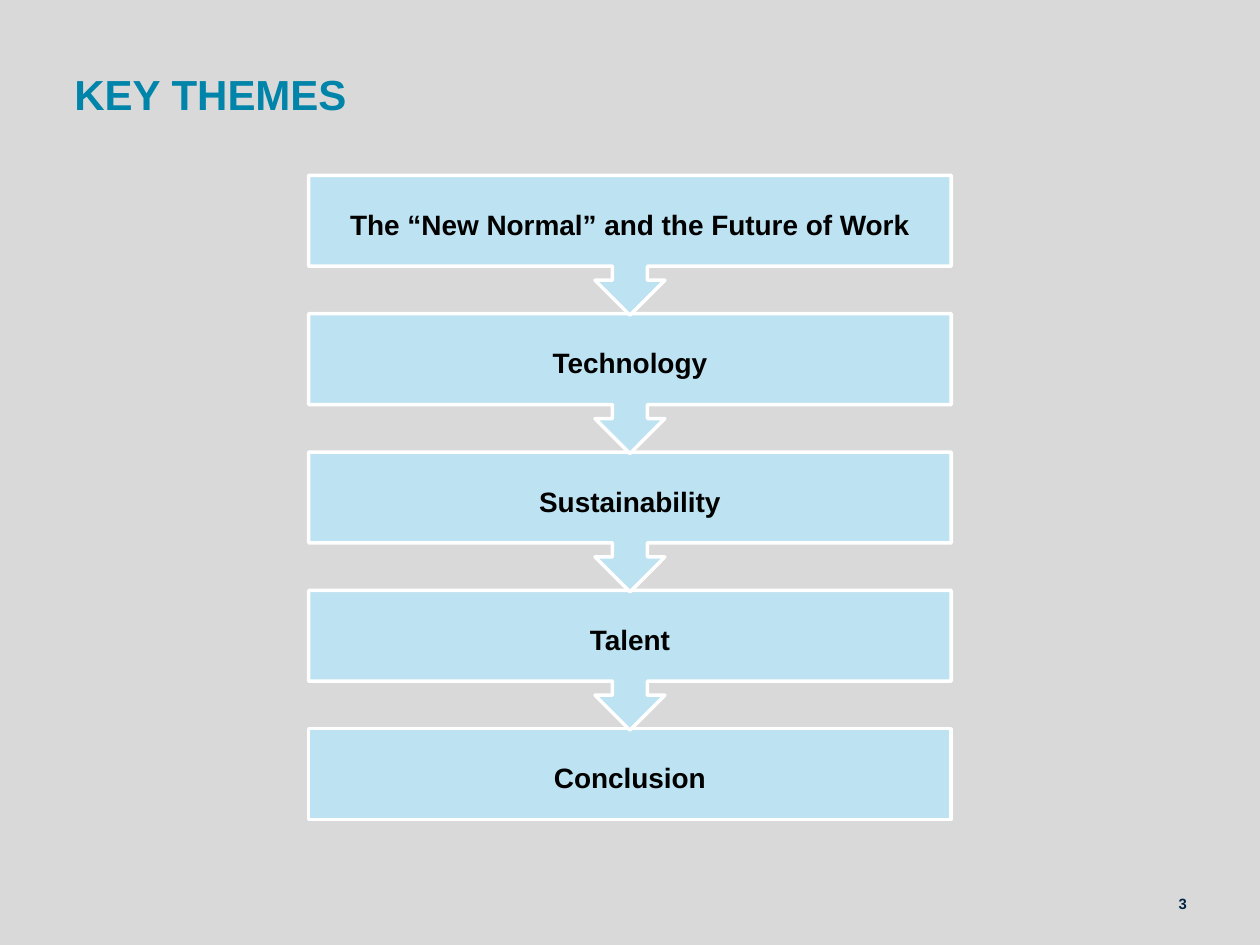
from pptx import Presentation
from pptx.dml.color import RGBColor
from pptx.enum import shapes, text
from pptx.util import Pt

TITLE = "KEY THEMES"
THEMES = [
    "The “New Normal” and the Future of Work",
    "Technology",
    "Sustainability",
    "Talent",
    "Conclusion",
]
PAGE_NUMBER = "3"
COLORS = {
    "background": "D9D9D9",
    "title": "0084A9",
    "step": "BDE2F1",
    "outline": "FFFFFF",
    "theme": "000000",
    "page": "002244",
}
SLIDE_WIDTH, SLIDE_HEIGHT = 720, 540
STEP_WIDTH, STEP_TOP, STEP_PITCH = 367.2, 100.2, 79.05
CALLOUT_HEIGHT, BOX_HEIGHT = 79.9, 51.9
STEP_LEFT = (SLIDE_WIDTH - STEP_WIDTH) / 2


def color(name):
    return RGBColor.from_string(COLORS[name])


def write(shape, words, size, color_name, align, insets):
    frame = shape.text_frame
    frame.word_wrap = True
    frame.auto_size = text.MSO_AUTO_SIZE.NONE
    frame.vertical_anchor = text.MSO_ANCHOR.MIDDLE
    frame.margin_left, frame.margin_top, frame.margin_right, frame.margin_bottom = map(Pt, insets)
    frame.text = words
    paragraph = frame.paragraphs[0]
    paragraph.alignment = align
    font = paragraph.runs[0].font
    font.name, font.size, font.bold = "Arial", Pt(size), True
    font.color.rgb = color(color_name)
    return paragraph


def add_step(slide, index, theme):
    last = index == len(THEMES) - 1
    kind = shapes.MSO_SHAPE.RECTANGLE if last else shapes.MSO_SHAPE.DOWN_ARROW_CALLOUT
    height = BOX_HEIGHT if last else CALLOUT_HEIGHT
    step = slide.shapes.add_shape(
        kind, Pt(STEP_LEFT), Pt(STEP_TOP + index * STEP_PITCH), Pt(STEP_WIDTH), Pt(height))
    step.shadow.inherit = False
    step.fill.solid()
    step.fill.fore_color.rgb = color("step")
    step.line.color.rgb = color("outline")
    step.line.width = Pt(2)
    paragraph = write(step, theme, 16, "theme", text.PP_ALIGN.CENTER, [8.6] * 4)
    paragraph.line_spacing = 1.21
    paragraph.space_after = Pt(5.6)


def main():
    deck = Presentation()
    deck.slide_width, deck.slide_height = Pt(SLIDE_WIDTH), Pt(SLIDE_HEIGHT)
    slide = deck.slides.add_slide(deck.slide_layouts[5])
    slide.background.fill.solid()
    slide.background.fill.fore_color.rgb = color("background")

    title = slide.shapes.title
    title.left, title.top, title.width, title.height = map(Pt, (42.5, 38.9, 635, 37.4))
    write(title, TITLE, 24, "title", text.PP_ALIGN.LEFT, (0, 0, 0, 8.6))

    page = slide.shapes.add_textbox(Pt(652.3), Pt(511.2), Pt(25.9), Pt(10.1))
    write(page, PAGE_NUMBER, 8.5, "page", text.PP_ALIGN.RIGHT, [0] * 4)

    for index, theme in reversed(list(enumerate(THEMES))):
        add_step(slide, index, theme)

    deck.save("out.pptx")


if __name__ == "__main__":
    main()
